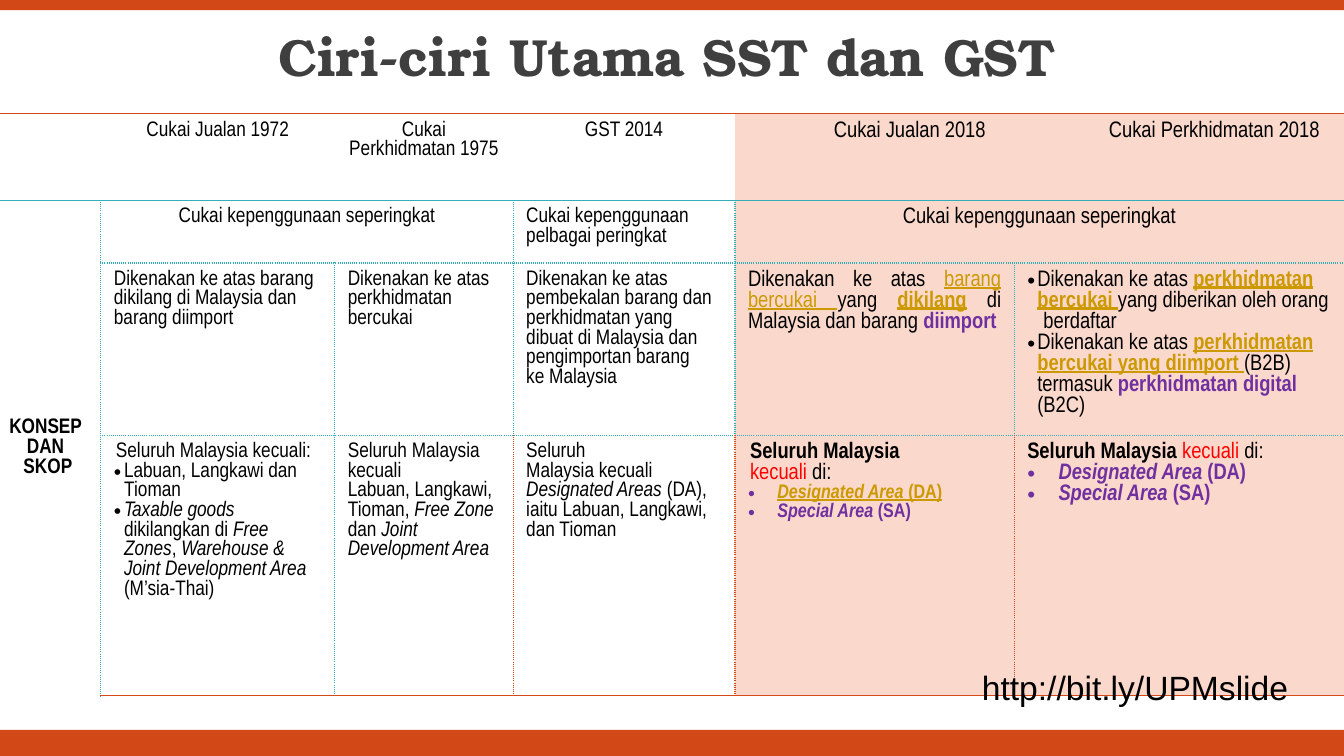
from lxml import etree
from pptx import Presentation
from pptx.dml.color import RGBColor
from pptx.enum.shapes import MSO_SHAPE as Shape
from pptx.enum.text import MSO_ANCHOR as Anchor, MSO_AUTO_SIZE as AutoSize, PP_ALIGN as Align
from pptx.oxml.ns import qn
from pptx.util import Inches, Pt

ORANGE, TEAL, PEACH, WHITE = "D34817", "32AEB8", "FAD8CB", "FFFFFF"
BLACK, GOLD, PURPLE, RED = "000000", "CC9900", "7030A0", "FF0000"
TITLE = "Ciri-ciri Utama SST dan GST"
LINK = "http://bit.ly/UPMslide"
BARS = [(0, 0.1), (7.24, 0.26)]

COLUMNS = [1.05, 2.32, 1.77, 2.2, 2.77, 0.7, 2.57]
ROWS = [0.86, 0.62, 1.71, 2.58]
MERGES = [(0, 4, 0, 5), (1, 0, 3, 0), (1, 1, 1, 2), (1, 4, 1, 6), (2, 5, 2, 6), (3, 5, 3, 6)]

STYLES = {
    "plain": (BLACK, ""), "bold": (BLACK, "b"), "italic": (BLACK, "i"), "red": (RED, ""),
    "gold": (GOLD, "u"), "gold bold": (GOLD, "bu"), "gold area": (GOLD, "biu"),
    "purple": (PURPLE, "b"), "purple area": (PURPLE, "bi"),
}
ALIGNS = {"center": Align.CENTER, "justify": Align.JUSTIFY, "left": Align.LEFT}


def para(*runs, align="left", indent=0, bullet=None, size=None):
    runs = [(run, "plain") if isinstance(run, str) else run for run in runs]
    return {"runs": runs, "align": align, "indent": indent, "bullet": bullet, "size": size}


CELLS = {
    (0, 1): [para("Cukai Jualan 1972", align="center")],
    (0, 2): [para("Cukai Perkhidmatan 1975", align="center")],
    (0, 3): [para("GST 2014", align="center")],
    (0, 4): [para("Cukai Jualan 2018", align="center")],
    (0, 6): [para("Cukai Perkhidmatan 2018", align="center")],
    (1, 0): [para((word, "bold"), align="center") for word in ("KONSEP ", "DAN ", "SKOP")],
    (1, 1): [para("Cukai kepenggunaan seperingkat", align="center")],
    (1, 3): [para("Cukai kepenggunaan"), para("pelbagai peringkat")],
    (1, 4): [para("Cukai kepenggunaan seperingkat", align="center")],
    (2, 1): [para("Dikenakan ke atas barang dikilang di Malaysia dan barang diimport")],
    (2, 2): [para("Dikenakan ke atas perkhidmatan bercukai")],
    (2, 3): [
        para("Dikenakan ke atas"),
        para("pembekalan barang dan perkhidmatan yang"),
        para("dibuat di Malaysia dan pengimportan barang"),
        para("ke Malaysia"),
    ],
    (2, 4): [
        para("Dikenakan ke atas ", ("barang bercukai ", "gold"), "yang ", ("dikilang", "gold bold"),
             " di Malaysia dan barang ", ("diimport", "purple"), align="justify"),
    ],
    (2, 5): [
        para("Dikenakan ke atas ", ("perkhidmatan bercukai ", "gold bold"),
             "yang diberikan oleh orang", indent=0.1, bullet=BLACK),
        para("berdaftar", indent=0.16),
        para("Dikenakan ke atas ", ("perkhidmatan bercukai yang diimport", "gold bold"),
             (" ", "gold"), "(B2B) termasuk ", ("perkhidmatan digital ", "purple"), "(B2C)",
             indent=0.1, bullet=BLACK),
    ],
    (3, 1): [
        para("Seluruh Malaysia kecuali:", indent=0.02),
        para("Labuan, Langkawi dan Tioman", indent=0.1, bullet=BLACK),
        para(("Taxable goods ", "italic"), "dikilangkan di ", ("Free Zones", "italic"), ", ",
             ("Warehouse & Joint Development Area ", "italic"), "(M’sia-Thai)",
             indent=0.1, bullet=BLACK),
    ],
    (3, 2): [
        para("Seluruh Malaysia"),
        para("kecuali"),
        para("Labuan, Langkawi, Tioman, ", ("Free Zone", "italic"), " dan ",
             ("Joint Development Area", "italic")),
    ],
    (3, 3): [
        para("Seluruh"),
        para("Malaysia kecuali"),
        para(("Designated Areas ", "italic"), "(DA),"),
        para("iaitu Labuan, Langkawi,"),
        para("dan Tioman"),
    ],
    (3, 4): [
        para(("Seluruh Malaysia", "bold"), indent=0.02),
        para(("kecuali", "red"), " di:", indent=0.02),
        para(("Designated Area ", "gold area"), ("(DA)", "gold bold"),
             indent=0.29, bullet=PURPLE, size=14),
        para(("Special Area ", "purple area"), ("(SA)", "purple"),
             indent=0.29, bullet=PURPLE, size=14),
    ],
    (3, 5): [
        para(("Seluruh Malaysia ", "bold"), ("kecuali ", "red"), "di:"),
        para(("Designated Area ", "purple area"), ("(DA)", "purple"), indent=0.31, bullet=PURPLE),
        para(("Special Area ", "purple area"), ("(SA)", "purple"), indent=0.31, bullet=PURPLE),
    ],
}


def rgb(value):
    return RGBColor.from_string(value)


def add_run(paragraph, text, font_name, size, color, marks=""):
    run = paragraph.add_run()
    run.text = text
    font = run.font
    font.name, font.size = font_name, Pt(size)
    font.color.rgb = rgb(color)
    font.bold, font.italic, font.underline = "b" in marks, "i" in marks, "u" in marks


def add_node(parent, tag, **attributes):
    return etree.SubElement(parent, qn(tag), **attributes)


def write_cell(frame, content, size):
    for index, part in enumerate(content):
        paragraph = frame.paragraphs[0] if index == 0 else frame.add_paragraph()
        paragraph.alignment = ALIGNS[part["align"]]
        props = paragraph._p.get_or_add_pPr()
        props.set("marL", str(Inches(part["indent"])))
        if part["bullet"]:
            props.set("indent", str(-Inches(part["indent"])))
            add_node(add_node(props, "a:buClr"), "a:srgbClr", val=part["bullet"])
            add_node(props, "a:buFont", typeface="Arial")
            add_node(props, "a:buChar", char="•")
        for text, style in part["runs"]:
            add_run(paragraph, text, "Arial Narrow", part["size"] or size, *STYLES[style])


def row_line(edge, column):
    if edge in (0, len(ROWS)):
        return ORANGE, "solid"
    if edge == 1:
        return TEAL, "solid"
    if column == 0 or (edge, column) == (2, 2):
        return None
    return TEAL, "sysDot"


def column_line(edge, row):
    if row == 0 or edge not in (1, 3, 4):
        return None
    return (ORANGE if row == 3 and edge > 1 else TEAL), "sysDot"


def add_borders(cell, row, column):
    props = cell._tc.get_or_add_tcPr()
    sides = {
        "a:lnL": column_line(column, row), "a:lnR": column_line(column + 1, row),
        "a:lnT": row_line(row, column), "a:lnB": row_line(row + 1, column),
    }
    for tag, border in sides.items():
        if border:
            color, dash = border
            line = add_node(props, tag, w=str(Pt(1)))
            add_node(add_node(line, "a:solidFill"), "a:srgbClr", val=color)
            add_node(line, "a:prstDash", val=dash)


def add_comparison(slide):
    table = slide.shapes.add_table(len(ROWS), len(COLUMNS), Inches(-0.05), Inches(1.13),
                                   Inches(sum(COLUMNS)), Inches(sum(ROWS))).table
    table.first_row = table.horz_banding = False
    style_id = table._tbl.tblPr.find(qn("a:tableStyleId"))
    style_id.text = "{2D5ABB26-0587-4C30-8999-92F81FD0307C}"
    for column, width in enumerate(COLUMNS):
        table.columns[column].width = Inches(width)
    for row, height in enumerate(ROWS):
        table.rows[row].height = Inches(height)
        for column in range(len(COLUMNS)):
            cell = table.cell(row, column)
            current = column >= 4
            add_borders(cell, row, column)
            cell.fill.solid()
            cell.fill.fore_color.rgb = rgb(PEACH if current else WHITE)
            cell.margin_left = cell.margin_right = Inches(0.13)
            cell.margin_top = cell.margin_bottom = Inches(0.07)
            write_cell(cell.text_frame, CELLS.get((row, column), []), 16 if current else 15)
    for top, left, bottom, right in MERGES:
        table.cell(top, left).merge(table.cell(bottom, right))
    table.cell(1, 0).vertical_anchor = Anchor.MIDDLE


def main():
    deck = Presentation()
    deck.slide_width, deck.slide_height = Inches(13.33), Inches(7.5)
    slide = deck.slides.add_slide(deck.slide_layouts[5])

    for top, height in BARS:
        bar = slide.shapes.add_shape(Shape.RECTANGLE, 0, Inches(top), deck.slide_width, Inches(height))
        bar.shadow.inherit = False
        bar.fill.solid()
        bar.fill.fore_color.rgb = rgb(ORANGE)
        bar.line.fill.background()

    title = slide.shapes.title
    title.left, title.top, title.width, title.height = map(Inches, (-0.05, 0.17, 13.33, 0.84))
    title.text_frame.auto_size = AutoSize.NONE
    title.text_frame.vertical_anchor = Anchor.MIDDLE
    heading = title.text_frame.paragraphs[0]
    heading.alignment, heading.line_spacing = Align.CENTER, 0.9
    add_run(heading, TITLE, "TeX Gyre Bonum", 37.3, "3F3F3F", "b")

    add_comparison(slide)

    link = slide.shapes.add_textbox(*map(Inches, (9.64, 6.52, 3.28, 0.37))).text_frame
    link.word_wrap = True
    link.margin_left = link.margin_right = link.margin_top = link.margin_bottom = Inches(0.1)
    add_run(link.paragraphs[0], LINK, "Arial", 24, BLACK)

    deck.save("out.pptx")


if __name__ == "__main__":
    main()
